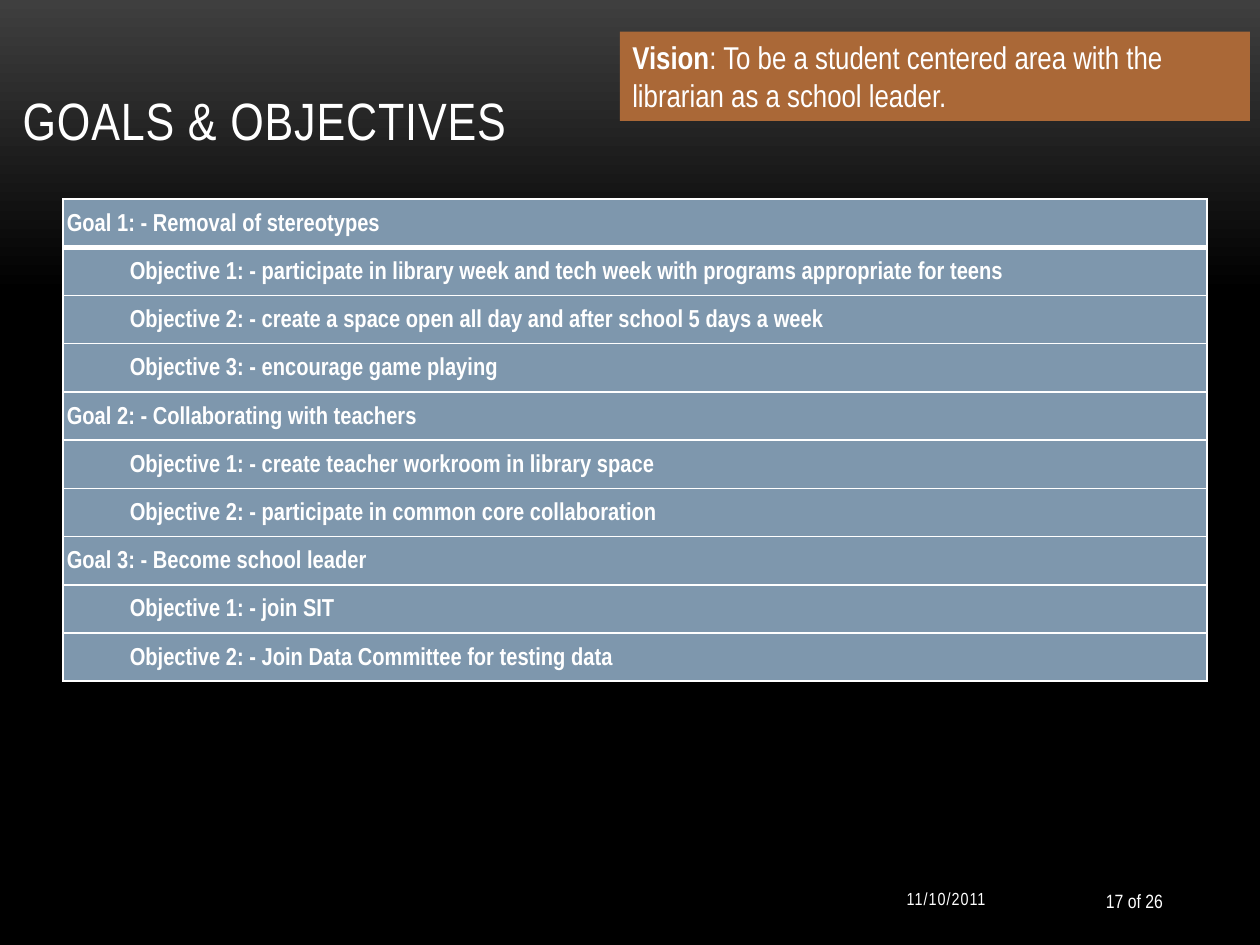
from lxml.etree import SubElement
from pptx import Presentation
from pptx.dml.color import RGBColor
from pptx.enum.shapes import MSO_SHAPE
from pptx.enum.text import MSO_ANCHOR, PP_ALIGN
from pptx.oxml.ns import qn
from pptx.util import Inches, Pt

# Content
TITLE = "GOALS & OBJECTIVES"
VISION = [("Vision", True),
          (": To be a student centered area with the librarian as a school leader.", False)]
GOALS = [
    ("Removal of stereotypes", [
        "participate in library week and tech week with programs appropriate for teens",
        "create a space open all day and after school 5 days a week",
        "encourage game playing"]),
    ("Collaborating with teachers", [
        "create teacher workroom in library space",
        "participate in common core collaboration"]),
    ("Become school leader", [
        "join SIT",
        "Join Data Committee for testing data"]),
]
# text, (left, top, width, height), size, letter spacing in points
FOOTERS = [
    ("17 of 26", (8.25, 6.95, 1.08, 0.4), 11, 0),
    ("11/10/2011", (6.25, 6.93, 1.67, 0.4), 10, 0.6),
]
COLORS = {"text": "FFFFFF", "row": "7E97AD", "vision": "AA6837",
          "glow": "3F3F3F", "background": "000000"}
FONT = "Arial Narrow"


def color(name):
    return RGBColor.from_string(COLORS[name])


def add_run(paragraph, text, size, bold=False, spacing=0):
    run = paragraph.add_run()
    run.text = text
    for key, value in {"name": FONT, "size": Pt(size), "bold": bold}.items():
        setattr(run.font, key, value)
    run.font.color.rgb = color("text")
    if spacing:
        run.font._element.set("spc", str(round(spacing * 100)))


def place(shape, box):
    for key, value in zip(("left", "top", "width", "height"), box):
        setattr(shape, key, Inches(value))


def add_borders(cell, widths):
    properties = cell._tc.get_or_add_tcPr()
    for side, width in widths.items():
        line = SubElement(properties, qn(f"a:ln{side}"), w=str(Pt(width)))
        SubElement(SubElement(line, qn("a:solidFill")), qn("a:srgbClr"), val=COLORS["text"])


prs = Presentation()
prs.slide_width, prs.slide_height = Inches(10), Inches(7.5)
slide = prs.slides.add_slide(prs.slide_layouts[5])

# Background
backdrop = slide.background.fill
backdrop.gradient()
backdrop.gradient_angle = 270
for stop, (position, name) in zip(backdrop.gradient_stops, [(0, "glow"), (0.31, "background")]):
    stop.position = position
    stop.color.rgb = color(name)

# Title
title = slide.shapes.title
place(title, (0.08, 0, 8.67, 1.25))
title.text_frame.vertical_anchor = MSO_ANCHOR.BOTTOM
heading = title.text_frame.paragraphs[0]
heading.alignment = PP_ALIGN.LEFT
add_run(heading, TITLE, 30, spacing=0.5)

# Goals table: one row per goal, followed by its objectives
rows = []
for goal_number, (goal, objectives) in enumerate(GOALS, 1):
    rows.append((f"Goal {goal_number}: - {goal}", 0))
    rows += [(f"Objective {number}: - {objective}", 1)
             for number, objective in enumerate(objectives, 1)]

goals_table = slide.shapes.add_table(
    len(rows), 1, Inches(0.5), Inches(1.58), Inches(9.08), Inches(3.83)).table
for index, (text, level) in enumerate(rows):
    cell = goals_table.cell(index, 0)
    add_borders(cell, {"L": 1, "R": 1, "T": 3 if index == 1 else 1, "B": 3 if index == 0 else 1})
    cell.fill.solid()
    cell.fill.fore_color.rgb = color("row")
    cell.vertical_anchor = MSO_ANCHOR.MIDDLE
    for side in ("left", "right", "top", "bottom"):
        setattr(cell, f"margin_{side}", Inches(0.03))
    entry = cell.text_frame.paragraphs[0]
    entry.level = level
    entry.line_spacing = 1.15
    entry._p.get_or_add_pPr().set("marL", str(Inches(0.5 * level)))
    add_run(entry, text, 14, bold=True)

# Vision banner
vision = slide.shapes.add_shape(
    MSO_SHAPE.RECTANGLE, Inches(4.92), Inches(0.25), Inches(5), Inches(0.71))
vision.shadow.inherit = False
vision.fill.solid()
vision.fill.fore_color.rgb = color("vision")
vision.line.fill.background()
vision.text_frame.word_wrap = True
statement = vision.text_frame.paragraphs[0]
statement.alignment = PP_ALIGN.LEFT
for text, bold in VISION:
    add_run(statement, text, 18, bold)

# Page number and date
for text, box, size, spacing in FOOTERS:
    footer = slide.shapes.add_textbox(*map(Inches, box)).text_frame
    footer.word_wrap = True
    footer.vertical_anchor = MSO_ANCHOR.MIDDLE
    footer.paragraphs[0].alignment = PP_ALIGN.RIGHT
    add_run(footer.paragraphs[0], text, size, spacing=spacing)

prs.save("out.pptx")
